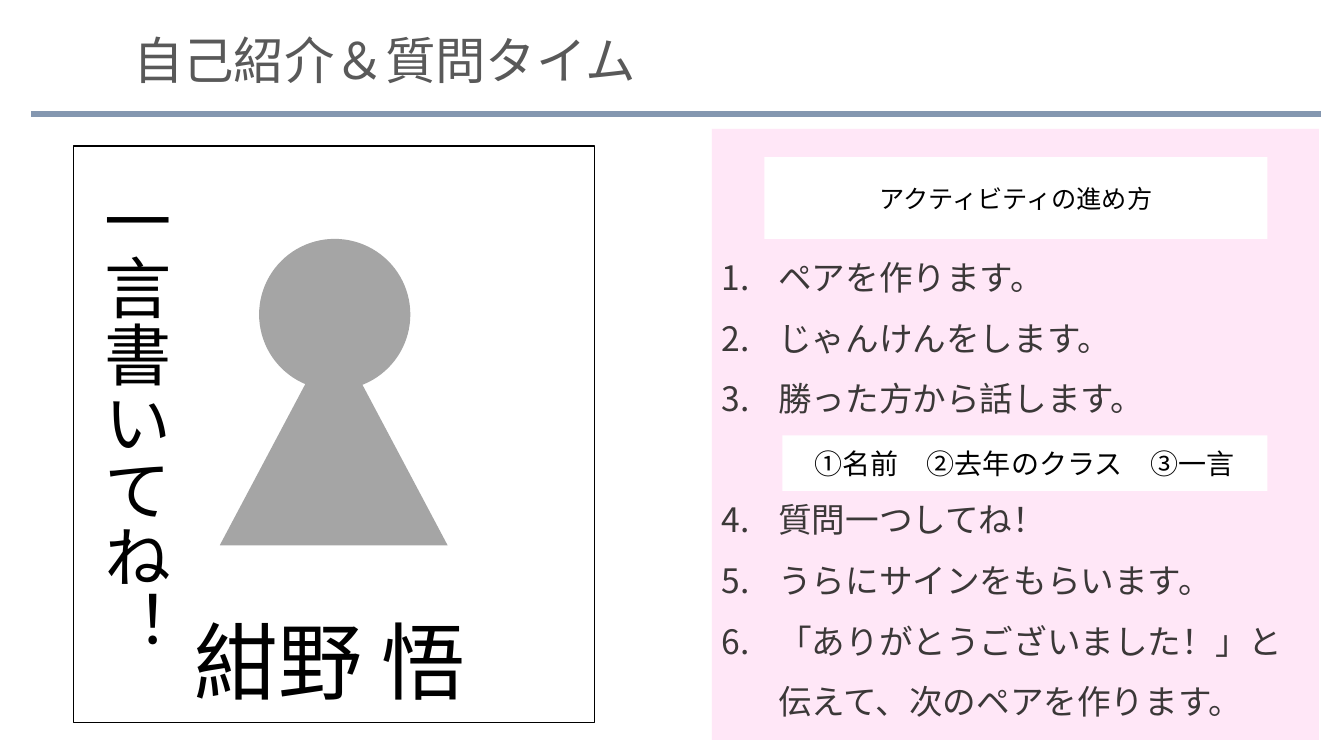
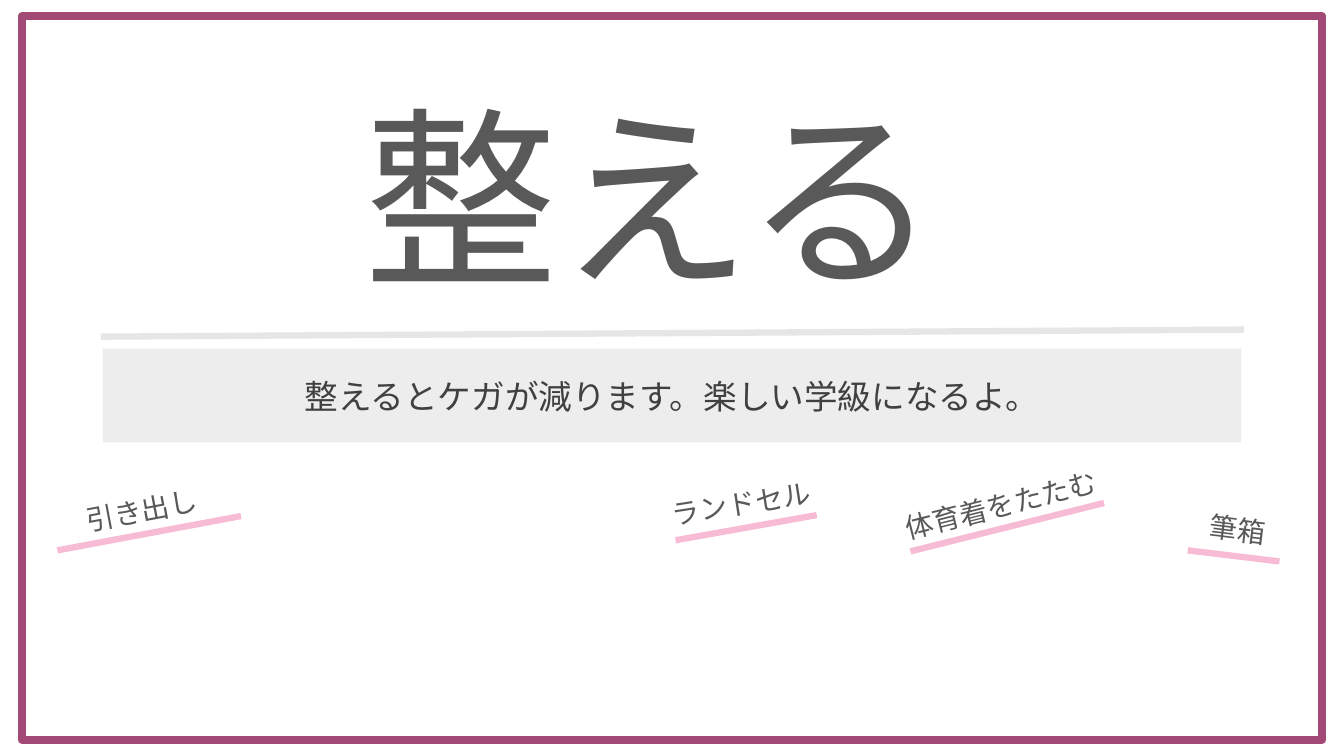
from pptx import Presentation
from pptx.dml.color import RGBColor
from pptx.enum.shapes import MSO_CONNECTOR, MSO_SHAPE
from pptx.enum.text import MSO_ANCHOR, MSO_AUTO_SIZE, PP_ALIGN
from pptx.oxml.xmlchemy import OxmlElement
from pptx.util import Emu, Pt

FONT = "Noto Sans CJK JP"
WHITE, BLACK = "FFFFFF", "000000"
TITLE_GRAY, BODY_GRAY, SUBTITLE_GRAY = "595959", "3B3838", "404040"
RULE_BLUE, RULE_GRAY, RULE_PINK = "8497B0", "E7E6E6", "F7BBD4"
PANEL_PINK, BAND_GRAY, FIGURE_GRAY = "FFE7F7", "EDEDED", "A5A5A5"
FRAME_PURPLE = "A34976"
RULE_WIDTH = 4.5
LABEL_HEIGHT = 44
LIST_PITCH = Pt(43.25)
LIST_INDENT = 56

STEPS = [
    "ペアを作ります。",
    "じゃんけんをします。",
    "勝った方から話します。",
    "質問一つしてね！",
    "うらにサインをもらいます。",
    "「ありがとうございました！」と伝えて、次のペアを作ります。",
]
STEP_AFTER_GAP = 3

# text, left, top, width, rotation, alignment
LABELS = [
    ("体育着をたたむ", 885, 477, 229, -14.3, PP_ALIGN.LEFT),
    ("引き出し", 49, 484, 183, -10.7, PP_ALIGN.CENTER),
    ("ランドセル", 656, 477, 161, -8.9, PP_ALIGN.LEFT),
    ("筆箱", 1181, 503, 93, 7, PP_ALIGN.CENTER),
]
UNDERLINES = [
    (57, 546, 239, 512),
    (903, 547, 1095, 499),
    (1178, 546, 1269, 557),
    (670, 536, 810, 511),
]


def px(length):
    """Turn px, 100 to the inch, into EMU."""
    return Emu(length * 9144)


def color(hex_string):
    return RGBColor.from_string(hex_string)


def add_run(paragraph, text, size, text_color):
    run = paragraph.add_run()
    run.text = text
    run.font.size = Pt(size)
    run.font.color.rgb = color(text_color)
    run.font.name = FONT
    east_asian = OxmlElement("a:ea")
    east_asian.set("typeface", FONT)
    run.font._element.append(east_asian)


def set_text(shape, text, size, text_color, align=PP_ALIGN.LEFT):
    """Write one paragraph, centred vertically in the shape."""
    frame = shape.text_frame
    frame.word_wrap = True
    frame.auto_size = MSO_AUTO_SIZE.NONE
    frame.vertical_anchor = MSO_ANCHOR.MIDDLE
    frame.margin_top = frame.margin_bottom = 0
    paragraph = frame.paragraphs[0]
    paragraph.alignment = align
    add_run(paragraph, text, size, text_color)


def add_title_slide(presentation, text, box, size, align):
    slide = presentation.slides.add_slide(presentation.slide_layouts[5])
    title = slide.shapes.title
    title.left, title.top, title.width, title.height = map(px, box)
    set_text(title, text, size, TITLE_GRAY, align)
    return slide


def add_text(slide, box, text, size, text_color, align=PP_ALIGN.LEFT):
    shape = slide.shapes.add_textbox(*map(px, box))
    set_text(shape, text, size, text_color, align)
    return shape


def add_box(slide, box, fill=None, line=None, line_width=1, kind=MSO_SHAPE.RECTANGLE):
    shape = slide.shapes.add_shape(kind, *map(px, box))
    shape.shadow.inherit = False
    if fill:
        shape.fill.solid()
        shape.fill.fore_color.rgb = color(fill)
    else:
        shape.fill.background()
    if line:
        shape.line.color.rgb = color(line)
        shape.line.width = Pt(line_width)
    else:
        shape.line.fill.background()
    return shape


def add_rule(slide, ends, line_color):
    rule = slide.shapes.add_connector(MSO_CONNECTOR.STRAIGHT, *map(px, ends))
    rule.line.color.rgb = color(line_color)
    rule.line.width = Pt(RULE_WIDTH)
    rule.element.spPr.append(OxmlElement("a:effectLst"))


def number_paragraph(paragraph):
    properties = paragraph._p.get_or_add_pPr()
    properties.set("marL", str(px(LIST_INDENT)))
    properties.set("indent", str(-px(LIST_INDENT)))
    number = OxmlElement("a:buAutoNum")
    number.set("type", "arabicPeriod")
    properties.append(number)


def fill_steps(panel):
    frame = panel.text_frame
    frame.word_wrap = True
    frame.vertical_anchor = MSO_ANCHOR.TOP
    frame.margin_top = px(107)
    for index, step in enumerate(STEPS):
        paragraph = frame.add_paragraph() if index else frame.paragraphs[0]
        paragraph.alignment = PP_ALIGN.LEFT
        paragraph.line_spacing = LIST_PITCH
        if index == STEP_AFTER_GAP:
            paragraph.space_before = LIST_PITCH
        number_paragraph(paragraph)
        add_run(paragraph, step, 24, BODY_GRAY)


def build_introduction(presentation):
    slide = add_title_slide(
        presentation, "自己紹介＆質問タイム", (122, 18, 1143, 81), 36, PP_ALIGN.LEFT)
    add_rule(slide, (31, 113, 1310, 113), RULE_BLUE)

    add_box(slide, (73, 145, 517, 572), WHITE, BLACK)
    add_text(slide, (183, 589, 310, 132), "紺野 悟", 60, BLACK)
    message = add_text(slide, (84, 186, 101, 500), "一言書いてね！", 48, BLACK)
    message.element.txBody.bodyPr.set("vert", "eaVert")
    add_box(slide, (257, 237, 150, 150), FIGURE_GRAY, kind=MSO_SHAPE.OVAL)
    add_box(slide, (218, 328, 226, 213), FIGURE_GRAY, kind=MSO_SHAPE.ISOSCELES_TRIANGLE)

    fill_steps(add_box(slide, (706, 128, 602, 606), PANEL_PINK))
    heading = add_box(slide, (758, 156, 499, 81), WHITE)
    set_text(heading, "アクティビティの進め方", 18, BLACK, PP_ALIGN.CENTER)
    topics = add_box(slide, (776, 432, 481, 55), WHITE)
    set_text(topics, "①名前　②去年のクラス　③一言", 20, BLACK, PP_ALIGN.CENTER)


def build_tidying(presentation):
    slide = add_title_slide(
        presentation, "整える", (218, 43, 857, 300), 138, PP_ALIGN.CENTER)
    add_box(slide, (22, 16, 1289, 718), line=FRAME_PURPLE, line_width=6)
    add_rule(slide, (100, 334, 1234, 327), RULE_GRAY)
    band = add_box(slide, (102, 346, 1129, 93), BAND_GRAY)
    set_text(band, "整えるとケガが減ります。楽しい学級になるよ。", 24, SUBTITLE_GRAY,
             PP_ALIGN.CENTER)
    for text, left, top, width, rotation, align in LABELS:
        label = add_text(
            slide, (left, top, width, LABEL_HEIGHT), text, 20, TITLE_GRAY, align)
        label.rotation = rotation
    for ends in UNDERLINES:
        add_rule(slide, ends, RULE_PINK)


def main():
    presentation = Presentation()
    presentation.slide_width = px(1333)
    presentation.slide_height = px(750)
    build_introduction(presentation)
    build_tidying(presentation)
    presentation.save("out.pptx")


if __name__ == "__main__":
    main()
